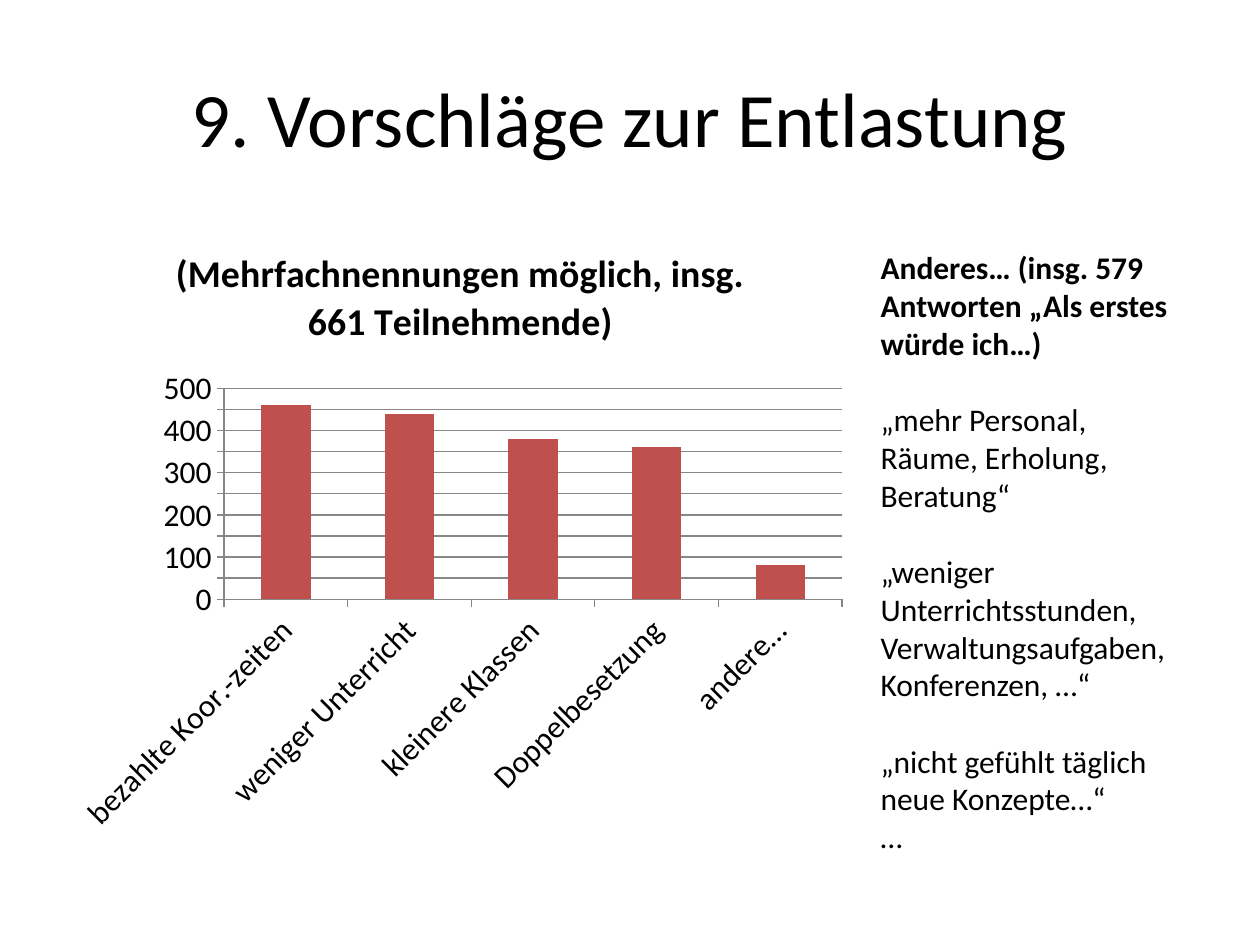
from pptx import Presentation
from pptx.chart.data import CategoryChartData
from pptx.dml.color import RGBColor
from pptx.enum.chart import XL_CHART_TYPE, XL_TICK_MARK
from pptx.enum.text import MSO_ANCHOR, PP_ALIGN
from pptx.util import Inches, Pt

COLORS = {"text": "000000", "bar": "C0504D", "line": "878787"}
FONT = "Calibri"
CHART_TITLE = "(Mehrfachnennungen möglich, insg. 661 Teilnehmende)"
SUGGESTIONS = {
    "bezahlte Koor.-zeiten": 460,
    "weniger Unterricht": 440,
    "kleinere Klassen": 380,
    "Doppelbesetzung": 360,
    "andere…": 80,
}
ANSWERS_HEADING = "Anderes… (insg. 579 Antworten „Als erstes würde ich…)"
ANSWERS = [
    "„mehr Personal, Räume, Erholung, Beratung“",
    "„weniger Unterrichtsstunden, Verwaltungsaufgaben, Konferenzen, …“",
    "„nicht gefühlt täglich neue Konzepte…“",
]


def color(name):
    return RGBColor.from_string(COLORS[name])


def style_font(font, size, bold=False):
    font.name = FONT
    font.size = Pt(size)
    font.bold = bold
    font.color.rgb = color("text")


def add_text_frame(slide, box):
    frame = slide.shapes.add_textbox(*box).text_frame
    frame.word_wrap = True
    return frame


def add_title(slide, box):
    frame = add_text_frame(slide, box)
    frame.vertical_anchor = MSO_ANCHOR.MIDDLE
    paragraph = frame.paragraphs[0]
    paragraph.text = "9. Vorschläge zur Entlastung"
    paragraph.alignment = PP_ALIGN.CENTER
    style_font(paragraph.font, 44)


def add_suggestions_chart(slide, box):
    data = CategoryChartData()
    data.categories = list(SUGGESTIONS)
    data.add_series(CHART_TITLE, list(SUGGESTIONS.values()))
    chart = slide.shapes.add_chart(XL_CHART_TYPE.COLUMN_CLUSTERED, *box, data).chart
    style_font(chart.font, 18)
    chart.has_legend = False

    chart.has_title = True
    title = chart.chart_title.text_frame.paragraphs[0]
    title.text = CHART_TITLE
    style_font(title.font, 21.6, bold=True)

    plot = chart.plots[0]
    plot.gap_width = 150
    plot.vary_by_categories = False
    fill = plot.series[0].format.fill
    fill.solid()
    fill.fore_color.rgb = color("bar")

    values = chart.value_axis
    values.minimum_scale, values.maximum_scale, values.major_unit = 0, 500, 50
    categories = chart.category_axis
    for axis in (values, categories):
        axis.major_tick_mark = XL_TICK_MARK.OUTSIDE
        style_font(axis.tick_labels.font, 18)
    for line in (values.format.line, categories.format.line,
                 values.major_gridlines.format.line):
        line.color.rgb = color("line")
        line.width = Pt(0.75)
    # Category labels rise at 45 degrees
    categories._element.txPr.bodyPr.set("rot", "-2700000")


def add_answers(slide, box):
    frame = add_text_frame(slide, box)
    for index, text in enumerate([ANSWERS_HEADING, *ANSWERS, "…"]):
        paragraph = frame.add_paragraph() if index else frame.paragraphs[0]
        paragraph.text = text
        if text in ANSWERS:
            paragraph.space_before = Pt(22)
        style_font(paragraph.font, 18, bold=index == 0)


def main():
    presentation = Presentation()
    presentation.slide_width = Inches(10)
    presentation.slide_height = Inches(7.5)
    slide = presentation.slides.add_slide(presentation.slide_layouts[6])
    add_title(slide, (Inches(0.5), Inches(0.3), Inches(9), Inches(1.25)))
    add_suggestions_chart(slide, (Inches(0.5), Inches(1.75), Inches(6.31), Inches(4.95)))
    add_answers(slide, (Inches(6.89), Inches(1.92), Inches(2.52), Inches(4.95)))
    presentation.save("out.pptx")


if __name__ == "__main__":
    main()
